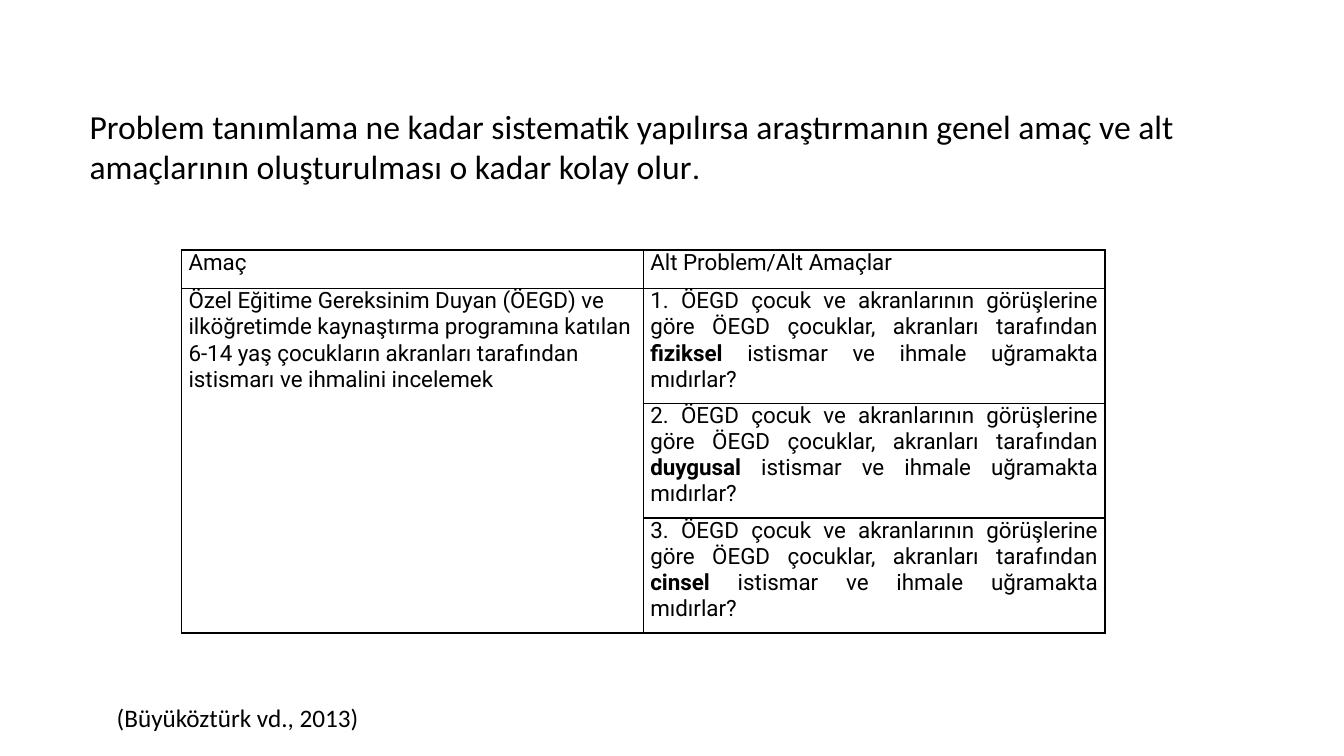
from dataclasses import dataclass

from lxml.etree import SubElement
from pptx import Presentation
from pptx.dml.color import RGBColor
from pptx.enum.text import PP_ALIGN as Align
from pptx.oxml.ns import qn
from pptx.slide import Slide
from pptx.table import Table, _Cell as Cell
from pptx.text.text import _Paragraph as Paragraph
from pptx.util import Emu, Pt

EMU_PER_PX = 9144


@dataclass(frozen=True)
class Theme:
    """Colours, fonts and type sizes of the slide."""
    ink: str = "000000"
    body_font: str = "Calibri"
    table_font: str = "Roboto"
    statement_size: int = 24
    citation_size: int = 18
    table_size: int = 16
    cell_space_after: int = 4
    border_width: int = 1


@dataclass(frozen=True)
class Span:
    """A stretch of text in one style."""
    text: str
    font: str
    size: int
    bold: bool = False


@dataclass(frozen=True)
class TextBlock:
    """A text box with its place in px."""
    left: int
    top: int
    width: int
    height: int
    spans: tuple[Span, ...]


@dataclass(frozen=True)
class Entry:
    """A table cell with its row, column and rows covered."""
    row: int
    column: int
    spans: tuple[Span, ...]
    align: Align = Align.JUSTIFY
    rows: int = 1


THEME = Theme()
ABUSE_KINDS = ("fiziksel", "duygusal", "cinsel")
COLUMN_WIDTHS = (458, 458)
ROW_HEIGHTS = (38, 114, 114, 114)


def px(length: int) -> Emu:
    """Turn px into EMU."""
    return Emu(length * EMU_PER_PX)


def table_span(text: str, bold: bool = False) -> Span:
    """Style text for the table."""
    return Span(text, THEME.table_font, THEME.table_size, bold)


def sub_problem(number: int, kind: str) -> Entry:
    """Word the sub-problem about one kind of abuse."""
    return Entry(number, 1, (
        table_span(f"{number}. ÖEGD çocuk ve akranlarının görüşlerine göre "
                   "ÖEGD çocuklar, akranları tarafından "),
        table_span(kind, bold=True),
        table_span(" istismar ve ihmale uğramakta mıdırlar?"),
    ))


STATEMENT = TextBlock(79, 100, 1217, 91, (
    Span("Problem tanımlama ne kadar sistematik yapılırsa araştırmanın genel "
         "amaç ve alt amaçlarının oluşturulması o kadar kolay olur",
         THEME.body_font, THEME.statement_size),
    Span(".", THEME.table_font, THEME.statement_size),
))
CITATION = TextBlock(106, 692, 1030, 40, (
    Span("(Büyüköztürk vd., 2013)", THEME.body_font, THEME.citation_size),
))
ENTRIES = (
    Entry(0, 0, (table_span("Amaç"),)),
    Entry(0, 1, (table_span("Alt Problem/Alt Amaçlar"),)),
    Entry(1, 0, (table_span(
        "Özel Eğitime Gereksinim Duyan (ÖEGD) ve ilköğretimde kaynaştırma "
        "programına katılan 6-14 yaş çocukların akranları tarafından "
        "istismarı ve ihmalini incelemek"),), Align.LEFT, len(ABUSE_KINDS)),
    *(sub_problem(number, kind) for number, kind in enumerate(ABUSE_KINDS, 1)),
)


def write_spans(paragraph: Paragraph, spans: tuple[Span, ...]) -> None:
    """Write the styled spans into a paragraph."""
    for span in spans:
        run = paragraph.add_run()
        run.text = span.text
        run.font.name = span.font
        run.font.size = Pt(span.size)
        run.font.bold = span.bold
        run.font.color.rgb = RGBColor.from_string(THEME.ink)


def add_text(slide: Slide, block: TextBlock) -> None:
    """Draw a wrapped text box."""
    box = slide.shapes.add_textbox(
        px(block.left), px(block.top), px(block.width), px(block.height))
    box.text_frame.word_wrap = True
    write_spans(box.text_frame.paragraphs[0], block.spans)


def style_cell(cell: Cell) -> None:
    """Clear the fill, set the margins and rule all four sides."""
    cell.margin_left = cell.margin_right = px(7)
    cell.margin_top = cell.margin_bottom = px(0)
    cell.fill.background()
    properties = cell._tc.get_or_add_tcPr()
    for place, side in enumerate(("lnL", "lnR", "lnT", "lnB")):
        line = SubElement(properties, qn(f"a:{side}"),
                          w=str(Pt(THEME.border_width)))
        fill = SubElement(line, qn("a:solidFill"))
        SubElement(fill, qn("a:srgbClr"), val=THEME.ink)
        properties.insert(place, line)


def fill_entry(table: Table, entry: Entry) -> None:
    """Merge the rows an entry covers and write its text."""
    cell = table.cell(entry.row, entry.column)
    if entry.rows > 1:
        cell.merge(table.cell(entry.row + entry.rows - 1, entry.column))
    paragraph = cell.text_frame.paragraphs[0]
    paragraph.alignment = entry.align
    paragraph.space_after = Pt(THEME.cell_space_after)
    write_spans(paragraph, entry.spans)


def add_aims_table(slide: Slide) -> None:
    """Draw the table of the aim and its sub-problems."""
    table = slide.shapes.add_table(
        len(ROW_HEIGHTS), len(COLUMN_WIDTHS), px(180), px(248),
        px(sum(COLUMN_WIDTHS)), px(sum(ROW_HEIGHTS))).table
    table.first_row = table.horz_banding = False
    for column, width in zip(table.columns, COLUMN_WIDTHS):
        column.width = px(width)
    for row, height in zip(table.rows, ROW_HEIGHTS):
        row.height = px(height)
    for cell in table.iter_cells():
        style_cell(cell)
    for entry in ENTRIES:
        fill_entry(table, entry)


def main() -> None:
    """Build and save the slide."""
    deck = Presentation()
    deck.slide_width, deck.slide_height = px(1333), px(750)
    slide = deck.slides.add_slide(deck.slide_layouts[6])
    add_aims_table(slide)
    for block in (STATEMENT, CITATION):
        add_text(slide, block)
    deck.save("out.pptx")


if __name__ == "__main__":
    main()
